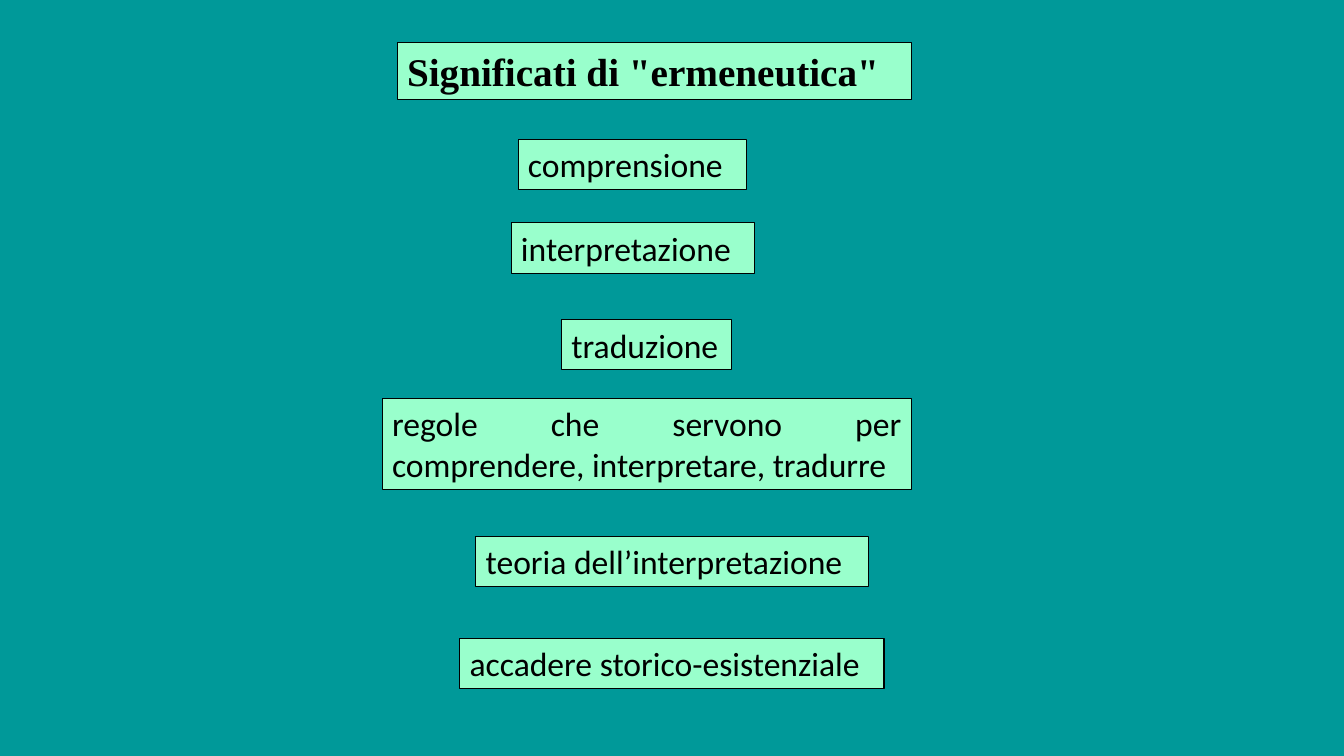
from dataclasses import dataclass

from pptx import Presentation
from pptx.dml.color import RGBColor
from pptx.enum.text import MSO_AUTO_SIZE as AutoSize, MSO_VERTICAL_ANCHOR as Anchor, PP_ALIGN as Align
from pptx.slide import Slide
from pptx.util import Inches, Pt

TEAL = RGBColor(0x00, 0x99, 0x99)
MINT = RGBColor(0x99, 0xFF, 0xCC)
BLACK = RGBColor(0x00, 0x00, 0x00)

SLIDE_WIDTH = Inches(13.33)
SLIDE_HEIGHT = Inches(7.5)
LINE_HEIGHT = 6.67


@dataclass(frozen=True)
class Meaning:
    text: str
    left: float
    top: float
    width: float
    height: float = LINE_HEIGHT
    align: Align = Align.LEFT


MEANINGS = [
    Meaning("comprensione", 38.55, 18.4, 17.03),
    Meaning("interpretazione", 38.03, 29.47, 18.08),
    Meaning("traduzione", 41.78, 42.27, 12.68),
    Meaning("regole che servono per comprendere, interpretare, tradurre",
            28.43, 52.67, 39.38, 12.13, Align.JUSTIFY),
    Meaning("teoria dell’interpretazione", 35.4, 70.93, 29.25),
    Meaning("accadere storico-esistenziale", 34.2, 84.4, 31.58),
]
TITLE = Meaning('Significati di "ermeneutica"', 29.55, 5.6, 38.25, 7.6)


def across(percent: float) -> int:
    return round(SLIDE_WIDTH * percent / 100)


def down(percent: float) -> int:
    return round(SLIDE_HEIGHT * percent / 100)


def add_label(page: Slide, meaning: Meaning, *, font: str = "Calibri",
              size: int = 24, bold: bool = False) -> None:
    box = page.shapes.add_textbox(across(meaning.left), down(meaning.top),
                                  across(meaning.width), down(meaning.height))
    box.fill.solid()
    box.fill.fore_color.rgb = MINT
    box.line.color.rgb = BLACK
    box.line.width = Pt(0.75)
    frame = box.text_frame
    frame.word_wrap = True
    frame.auto_size = AutoSize.SHAPE_TO_FIT_TEXT
    frame.vertical_anchor = Anchor.TOP
    para = frame.paragraphs[0]
    para.alignment = meaning.align
    span = para.add_run()
    span.text = meaning.text
    span.font.name = font
    span.font.size = Pt(size)
    span.font.bold = bold
    span.font.color.rgb = BLACK


def main() -> None:
    deck = Presentation()
    deck.slide_width = SLIDE_WIDTH
    deck.slide_height = SLIDE_HEIGHT
    page = deck.slides.add_slide(deck.slide_layouts[6])
    page.background.fill.solid()
    page.background.fill.fore_color.rgb = TEAL
    add_label(page, TITLE, font="Times New Roman", size=28, bold=True)
    for meaning in MEANINGS:
        add_label(page, meaning)
    deck.save("out.pptx")


if __name__ == "__main__":
    main()
